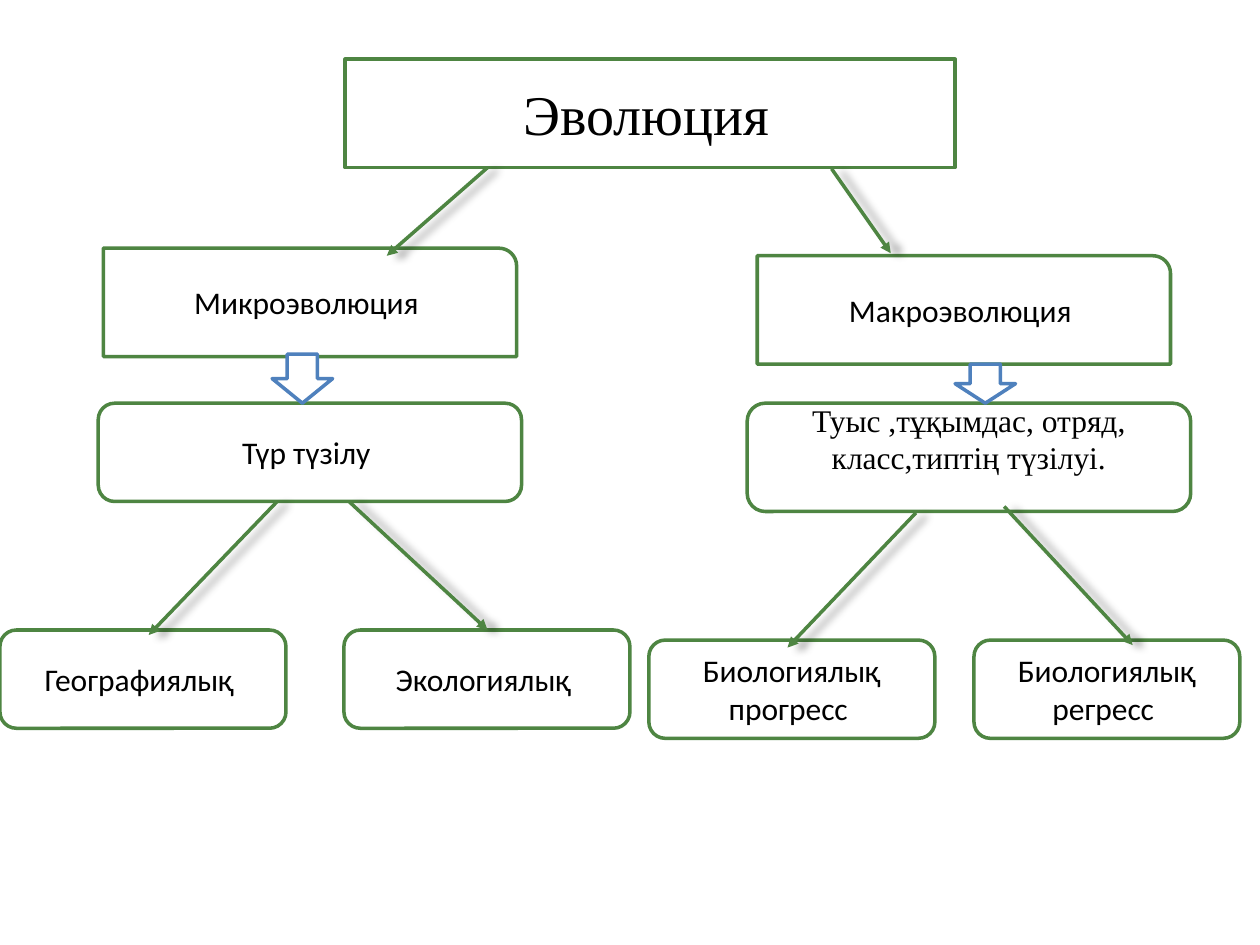
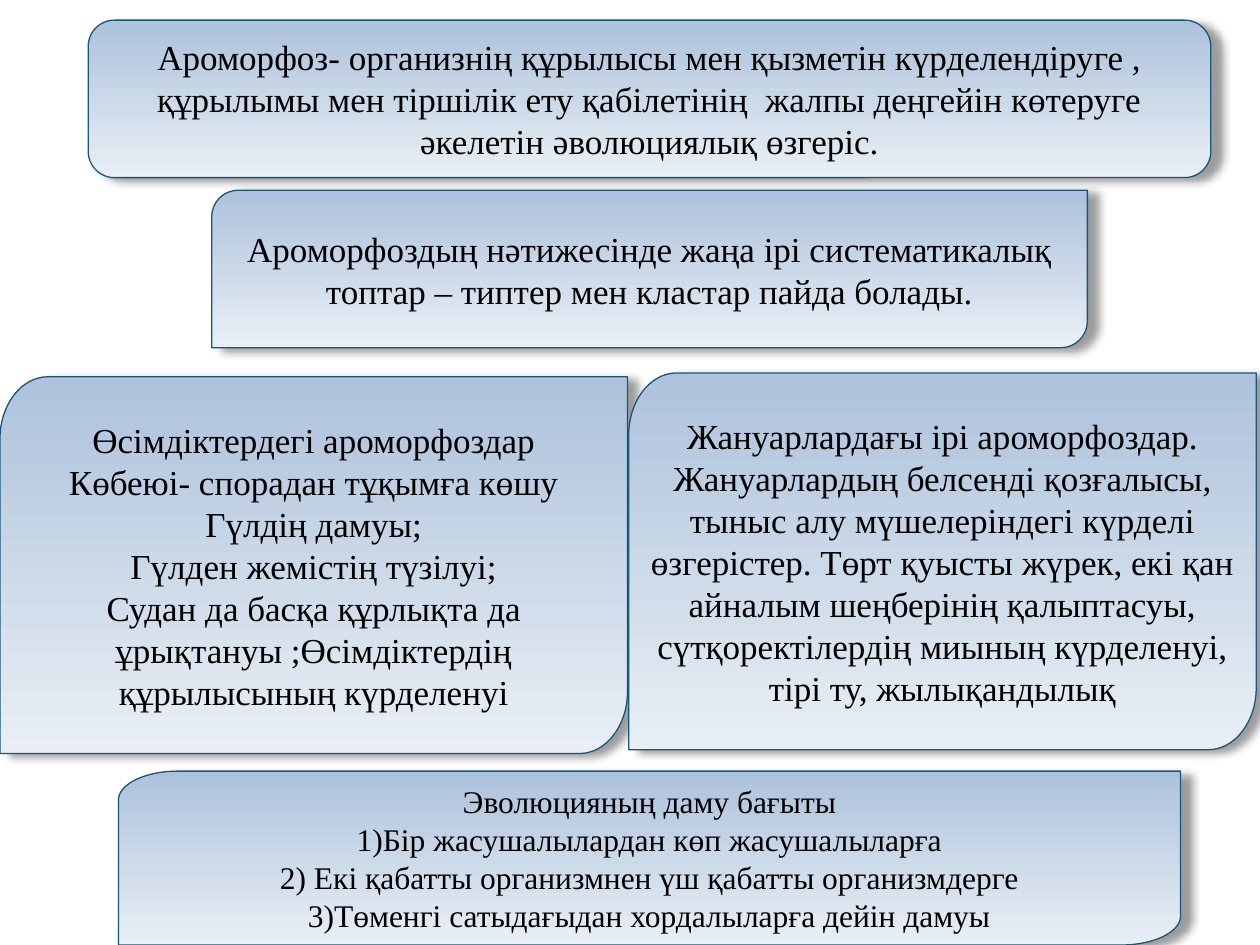
"""Builds two slides on evolution: a concept tree and panels on aromorphosis."""
from dataclasses import dataclass

from lxml import etree
from pptx import Presentation
from pptx.dml.color import RGBColor
from pptx.enum import shapes, text
from pptx.oxml.ns import qn
from pptx.util import Inches, Pt

PRESET = shapes.MSO_SHAPE
ARC_PULL = 0.55


@dataclass(frozen=True)
class Theme:
    """Colours, fonts and sizes shared by the slides."""
    paper: str = "FFFFFF"
    ink: str = "000000"
    green: str = "4E8542"
    blue: str = "4F81BD"
    navy: str = "18567B"
    pale: str = "E9EFF5"
    steel: str = "ADC2DB"
    sans: str = "Calibri"
    serif: str = "Times New Roman"
    title: int = 32
    large: int = 20
    body: int = 18
    bold_line: float = 2
    thin_line: float = 0.75


THEME = Theme()


@dataclass(frozen=True)
class Box:
    """A rectangle in inches."""
    left: float
    top: float
    width: float
    height: float

    def inner(self, left, top, width, height):
        """Return a box measured from this box's corner."""
        return Box(self.left + left, self.top + top, width, height)

    def emu(self):
        """Return the four lengths for python-pptx."""
        return [Inches(v) for v in (self.left, self.top, self.width, self.height)]


@dataclass(frozen=True)
class Branch:
    """One half of the tree, with places relative to its box."""
    head: str
    process: str
    process_font: str
    process_size: tuple
    spare_line: float
    head_at: tuple
    arrow_left: float
    arrow_overlap: float
    leaves: tuple
    links: tuple


MICRO = Branch(
    "Микроэволюция ", "Түр түзілу ", THEME.sans, (3.36, 0.78), 0,
    (0.82, 0), 2.16, 0.02,
    (("Географиялық ", 0, 2.27), ("Экологиялық ", 2.73, 2.27)),
    ((2.2, 2.01, 1.18, 3.07), (2.77, 2.01, 3.87, 3.03)))
MACRO = Branch(
    "Макроэволюция ", "Туыс ,тұқымдас, отряд, класс,типтің түзілуі.", THEME.serif,
    (3.52, 0.86), 0.3, (0.86, 0.06), 2.43, 0,
    (("Биологиялық прогресс ", 0, 2.27), ("Биологиялық регресс ", 2.58, 2.11)),
    ((2.12, 2.1, 1.1, 3.17), (2.82, 2.05, 3.84, 3.15)))

PANELS = (
    (Box(1.68, 1.51, 6.95, 1.25), (0.21, 0.21), THEME.large,
     ("Ароморфоздың нәтижесінде жаңа ірі систематикалық топтар – типтер мен "
      "кластар пайда болады.",)),
    (Box(0, 2.99, 4.98, 2.99), (0.38, 0.49), THEME.large,
     ("Өсімдіктердегі ароморфоздар", "Көбеюі- спорадан тұқымға көшу",
      "Гүлдің дамуы;", "Гүлден жемістің түзілуі;",
      "Судан да басқа құрлықта да ұрықтануы ;Өсімдіктердің құрылысының күрделенуі")),
    (Box(4.99, 2.96, 4.98, 2.99), (0.38, 0.49), THEME.large,
     ("Жануарлардағы ірі ароморфоздар.",
      "Жануарлардың белсенді қозғалысы, тыныс алу мүшелеріндегі күрделі өзгерістер. "
      "Төрт қуысты жүрек, екі қан айналым шеңберінің қалыптасуы, сүтқоректілердің "
      "миының күрделенуі, тірі ту, жылықандылық")),
    (Box(0.94, 6.12, 8.43, 1.38), (0.47, 0.23), THEME.body,
     ("Эволюцияның даму бағыты", "1)Бір жасушалылардан көп жасушалыларға",
      "2) Екі қабатты организмнен үш қабатты организмдерге",
      "3)Төменгі сатыдағыдан хордалыларға дейін дамуы")),
)
DEFINITION = ("Ароморфоз- организнің құрылысы мен қызметін күрделендіруге , құрылымы мен "
              "тіршілік ету қабілетінің  жалпы деңгейін көтеруге әкелетін әволюциялық өзгеріс.")


def rgb(code):
    """Turn a hex code into a colour."""
    return RGBColor.from_string(code)


def cast_shadow(item):
    """Give a shape or connector the soft offset shadow."""
    effects = etree.SubElement(item.element.spPr, qn("a:effectLst"))
    shadow = etree.SubElement(effects, qn("a:outerShdw"), blurRad=str(Pt(5)),
                              dist=str(Pt(5.9)), dir=str(16 * 60000), rotWithShape="0")
    tint = etree.SubElement(shadow, qn("a:srgbClr"), val=THEME.ink)
    etree.SubElement(tint, qn("a:alpha"), val="38000")


def outline(item, colour, width):
    """Set the line of a shape or connector."""
    item.line.color.rgb = rgb(colour)
    item.line.width = Pt(width)


def put_run(paragraph, words, font, size):
    """Add one run in the ink colour."""
    run = paragraph.add_run()
    run.text = words
    run.font.name, run.font.size = font, Pt(size)
    run.font.color.rgb = rgb(THEME.ink)


def write(shape, paragraphs, font, size, spare=0):
    """Write centred paragraphs, keeping spare inches free below."""
    frame = shape.text_frame
    frame.word_wrap = True
    frame.vertical_anchor = text.MSO_ANCHOR.MIDDLE
    frame.margin_left = frame.margin_right = Inches(0.1)
    frame.margin_top, frame.margin_bottom = Inches(0.05), Inches(0.05 + spare)
    for index, words in enumerate(paragraphs):
        paragraph = frame.add_paragraph() if index else frame.paragraphs[0]
        paragraph.alignment = text.PP_ALIGN.CENTER
        put_run(paragraph, words, font, size)


def bent_outline(slide, box, points, bends):
    """Build a closed outline, bending the numbered sides towards a corner."""
    def local(point):
        return Inches(point[0]), Inches(point[1])

    builder = slide.shapes.build_freeform(*(Inches(v) for v in (
        box.left + points[0][0], box.top + points[0][1])))
    builder.add_line_segments([(Inches(box.left + x), Inches(box.top + y))
                               for x, y in points[1:]], close=True)
    shape = builder.convert_to_shape()
    sides = list(shape.element.iter(qn("a:lnTo")))
    for index, corner in bends.items():
        start, end = points[index], points[index + 1]
        pulls = [tuple(p + ARC_PULL * (c - p) for p, c in zip(point, corner))
                 for point in (start, end)]
        curve = etree.Element(qn("a:cubicBezTo"))
        for x, y in map(local, (*pulls, end)):
            etree.SubElement(curve, qn("a:pt"), x=str(x), y=str(y))
        sides[index].getparent().replace(sides[index], curve)
    return shape


def tab_outline(slide, box, radius=0.14):
    """Build a rectangle with its top right corner rounded."""
    right, bottom = box.width, box.height
    points = [(0, 0), (right - radius, 0), (right, radius), (right, bottom),
              (0, bottom), (0, 0)]
    return bent_outline(slide, box, points, {1: (right, 0)})


def leaf_outline(slide, box, radii):
    """Build a rectangle with two opposite corners rounded."""
    across, down = radii
    right, bottom = box.width, box.height
    points = [(across, 0), (right, 0), (right, bottom - down), (right - across, bottom),
              (0, bottom), (0, down), (across, 0)]
    return bent_outline(slide, box, points, {2: (right, bottom), 5: (0, 0)})


def finish_node(shape, colour=THEME.green):
    """Give a tree node its white fill and outline."""
    shape.shadow.inherit = False
    shape.fill.solid()
    shape.fill.fore_color.rgb = rgb(THEME.paper)
    outline(shape, colour, THEME.bold_line)
    return shape


def node(slide, preset, box, colour=THEME.green):
    """Add a preset tree node."""
    return finish_node(slide.shapes.add_shape(preset, *box.emu()), colour)


def link(slide, box, ends):
    """Draw a shadowed arrow between two points of the box."""
    x1, y1, x2, y2 = ends
    points = (box.left + x1, box.top + y1, box.left + x2, box.top + y2)
    arrow = slide.shapes.add_connector(shapes.MSO_CONNECTOR.STRAIGHT,
                                       *(Inches(v) for v in points))
    outline(arrow, THEME.green, THEME.bold_line)
    etree.SubElement(arrow.element.spPr.find(qn("a:ln")), qn("a:tailEnd"), type="triangle")
    cast_shadow(arrow)


def draw_branch(slide, box, branch):
    """Draw a head, its process and two outcomes inside the box."""
    head_width, head_height, process_top, leaf_drop, leaf_height = 3.28, 0.86, 1.23, 1.02, 0.78
    head = finish_node(tab_outline(
        slide, box.inner(*branch.head_at, head_width, head_height)))
    write(head, [branch.head], THEME.sans, THEME.body)
    process = node(slide, PRESET.ROUNDED_RECTANGLE,
                   box.inner(0.78, process_top, *branch.process_size))
    write(process, [branch.process], branch.process_font, THEME.body, branch.spare_line)
    leaf_top = process_top + branch.process_size[1] + leaf_drop
    for words, left, width in branch.leaves:
        leaf = node(slide, PRESET.ROUNDED_RECTANGLE,
                    box.inner(left, leaf_top, width, leaf_height))
        write(leaf, [words], THEME.sans, THEME.body)
    for ends in branch.links:
        link(slide, box, ends)
    arrow_top = branch.head_at[1] + head_height - branch.arrow_overlap
    node(slide, PRESET.DOWN_ARROW,
         box.inner(branch.arrow_left, arrow_top, 0.48, process_top - arrow_top), THEME.blue)


def draw_tree(slide, box):
    """Draw the whole evolution tree."""
    root = node(slide, PRESET.RECTANGLE, box.inner(2.74, 0.47, 4.84, 0.86))
    write(root, ["Эволюция"], THEME.serif, THEME.title)
    put_run(root.text_frame.paragraphs[0], " ", THEME.sans, THEME.body)
    draw_branch(slide, box.inner(0, 1.97, 5, 3.81), MICRO)
    draw_branch(slide, box.inner(5.15, 1.97, 4.69, 3.89), MACRO)
    for ends in ((3.87, 1.33, 3.07, 2.03), (6.6, 1.34, 7.07, 2.01)):
        link(slide, box, ends)


def finish_panel(shape, paragraphs, size):
    """Give a panel its gradient, outline, shadow and text."""
    shape.fill.gradient()
    shape.fill.gradient_angle = 90
    for stop, colour in zip(shape.fill.gradient_stops, (THEME.pale, THEME.steel)):
        stop.color.rgb = rgb(colour)
    outline(shape, THEME.navy, THEME.thin_line)
    cast_shadow(shape)
    write(shape, paragraphs, THEME.serif, size)


def draw_panels(slide, box):
    """Draw the definition and the leaf panels."""
    definition = slide.shapes.add_shape(PRESET.ROUNDED_RECTANGLE,
                                        *box.inner(0.7, 0.16, 8.91, 1.25).emu())
    finish_panel(definition, [DEFINITION], THEME.large)
    for place, radii, size, paragraphs in PANELS:
        area = box.inner(place.left, place.top, place.width, place.height)
        finish_panel(leaf_outline(slide, area, radii), paragraphs, size)


def main():
    """Build and save the presentation."""
    deck = Presentation()
    page = Box(0, 0, 10, 7.5)
    deck.slide_width, deck.slide_height = Inches(page.width), Inches(page.height)
    for draw in (draw_tree, draw_panels):
        slide = deck.slides.add_slide(deck.slide_layouts[6])
        slide.background.fill.solid()
        slide.background.fill.fore_color.rgb = rgb(THEME.paper)
        draw(slide, page)
    deck.save("out.pptx")


if __name__ == "__main__":
    main()
